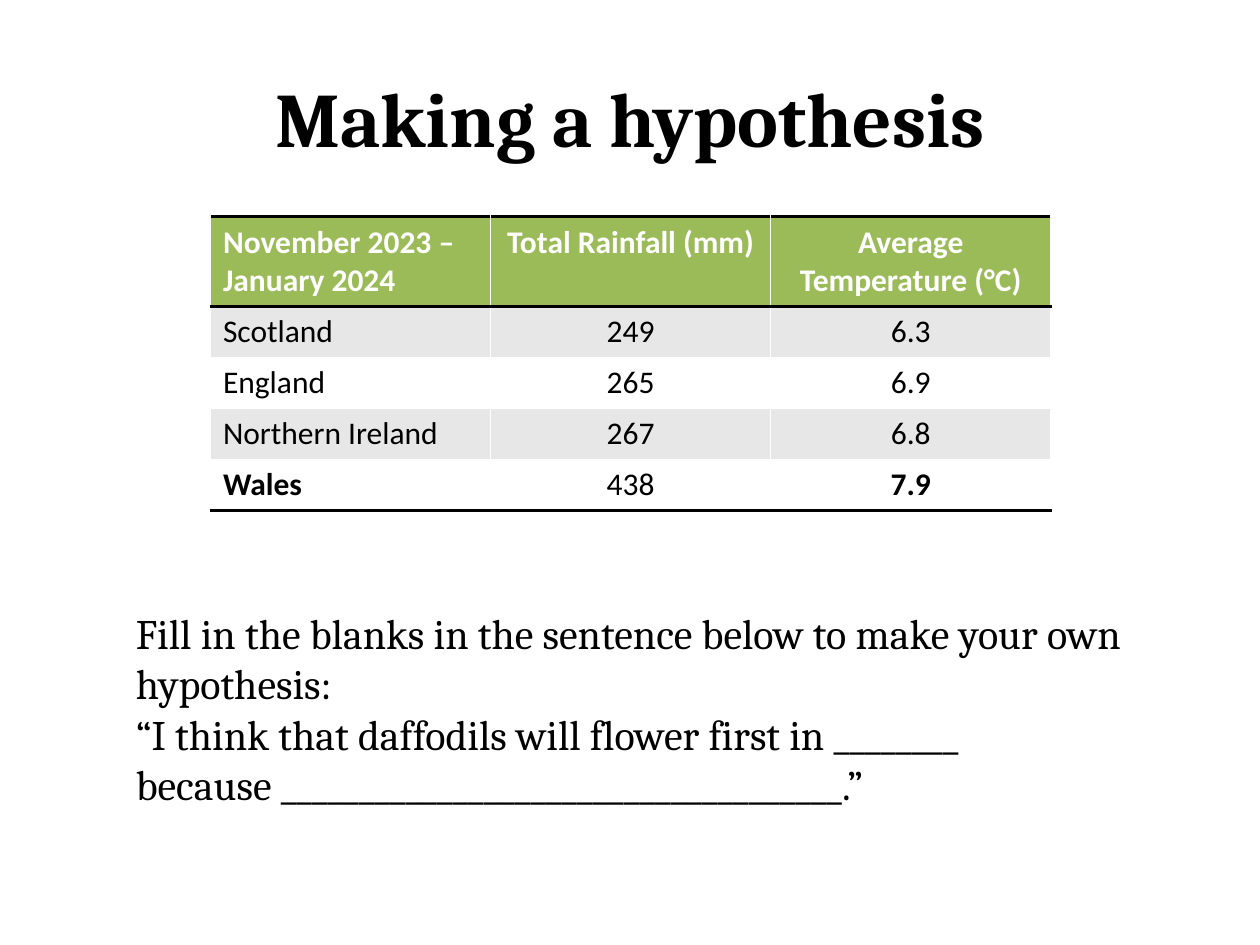
import pptx
import pptx.dml.color
import pptx.enum.text
import pptx.oxml
import pptx.oxml.ns
import pptx.util
from pptx.util import Inches

ALIGN = pptx.enum.text.PP_ALIGN
ANCHOR = pptx.enum.text.MSO_ANCHOR
BLACK, WHITE, GREEN, GREY = "000000", "FFFFFF", "9BBB59", "E7E7E7"

HEADER = ["November 2023 –\nJanuary 2024", "Total Rainfall (mm)",
          "Average Temperature (°C)"]
CLIMATE = [
    ["Scotland", "249", "6.3"],
    ["England", "265", "6.9"],
    ["Northern Ireland", "267", "6.8"],
    ["Wales", "438", "7.9"],
]
HIGHLIGHTED = {"Wales", "7.9"}
TASK = [
    "Fill in the blanks in the sentence below to make your own hypothesis:",
    "“I think that daffodils will flower first in ________",
    "because ____________________________________.”",
]


def rgb(color):
    return pptx.dml.color.RGBColor.from_string(color)


def write(tf, lines, size, font, color=BLACK, bold=False, align=ALIGN.LEFT):
    """Write each line as a paragraph with a single run."""
    for i, line in enumerate(lines):
        p = tf.add_paragraph() if i else tf.paragraphs[0]
        p.alignment = align
        r = p.add_run()
        r.text = line
        r.font.size = pptx.util.Pt(size)
        r.font.name = font
        r.font.bold = bold
        r.font.color.rgb = rgb(color)


def add_border(cell, side):
    """Add a 2 pt black rule; borders must come before the cell's fill."""
    cell._tc.get_or_add_tcPr().append(pptx.oxml.parse_xml(
        f'<a:ln{side} {pptx.oxml.ns.nsdecls("a")} w="{pptx.util.Pt(2)}">'
        f'<a:solidFill><a:srgbClr val="{BLACK}"/></a:solidFill></a:ln{side}>'))


def add_title(s, x, y, w, h):
    sp = s.shapes.title
    sp.left, sp.top, sp.width, sp.height = x, y, w, h
    sp.text_frame.vertical_anchor = ANCHOR.MIDDLE
    write(sp.text_frame, ["Making a hypothesis"], 44, "Cambria",
          bold=True, align=ALIGN.CENTER)


def add_climate_table(s, x, y, w, h):
    rows = [HEADER] + CLIMATE
    last = len(rows) - 1
    table = s.shapes.add_table(len(rows), len(HEADER), x, y, w, h).table

    # The header holds two lines; the data rows share the rest
    header_height = Inches(0.7)
    for i, row in enumerate(table.rows):
        row.height = (h - header_height) // last if i else header_height

    for i, texts in enumerate(rows):
        is_header = i == 0
        for j, text in enumerate(texts):
            cell = table.cell(i, j)
            if is_header:
                add_border(cell, "T")
            if i in (0, last):
                add_border(cell, "B")
            cell.fill.solid()
            cell.fill.fore_color.rgb = rgb(
                GREEN if is_header else GREY if i % 2 else WHITE)
            write(cell.text_frame, text.split("\n"), 18, "Calibri",
                  color=WHITE if is_header else BLACK,
                  bold=is_header or text in HIGHLIGHTED,
                  align=ALIGN.CENTER if j else ALIGN.LEFT)


def add_task(s, x, y, w, h):
    tf = s.shapes.add_textbox(x, y, w, h).text_frame
    tf.word_wrap = True
    tf.auto_size = pptx.enum.text.MSO_AUTO_SIZE.SHAPE_TO_FIT_TEXT
    write(tf, TASK, 24, "Cambria")


def main():
    prs = pptx.Presentation()
    prs.slide_width, prs.slide_height = Inches(10), Inches(7.5)
    s = prs.slides.add_slide(prs.slide_layouts[5])
    s.background.fill.solid()
    s.background.fill.fore_color.rgb = rgb(WHITE)

    add_title(s, Inches(0.5), Inches(0.3), Inches(9), Inches(1.25))
    add_climate_table(s, Inches(1.67), Inches(1.72), Inches(6.67), Inches(2.32))
    add_task(s, Inches(0.98), Inches(4.77), Inches(8.35), Inches(1.72))
    prs.save("out.pptx")


if __name__ == "__main__":
    main()
